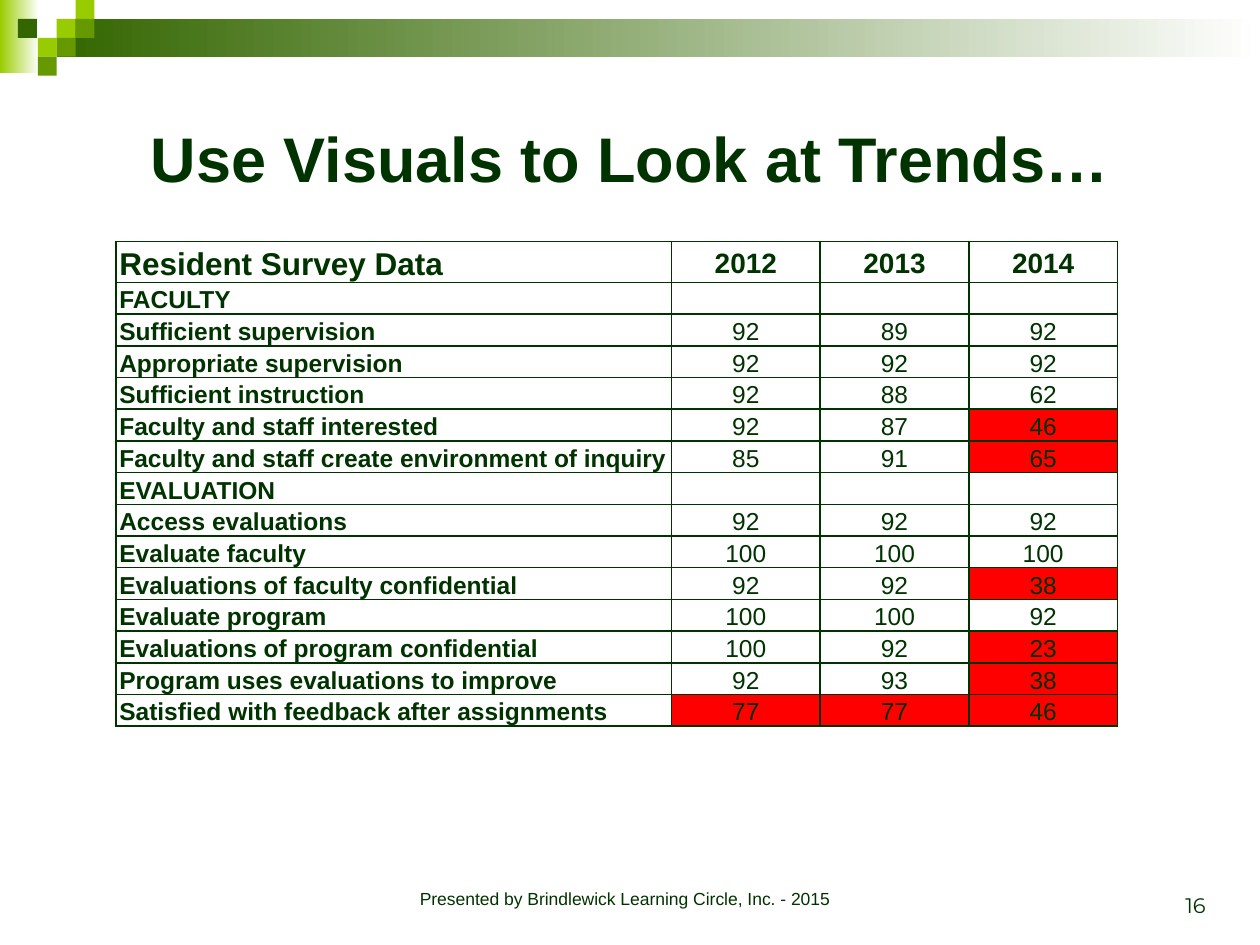
from dataclasses import dataclass

from lxml.etree import SubElement
from pptx import Presentation
from pptx.dml.color import RGBColor
from pptx.enum.shapes import MSO_SHAPE as Shape
from pptx.enum.text import MSO_ANCHOR as Anchor, MSO_AUTO_SIZE as AutoSize, PP_ALIGN as Align
from pptx.oxml.ns import qn
from pptx.util import Pt


@dataclass(frozen=True)
class Theme:
    """Colours, fonts and type sizes of the slide."""
    ink: str = "003300"
    paper: str = "FFFFFF"
    alert: str = "FF0000"
    lime: str = "99CC00"
    leaf: str = "669900"
    forest: str = "336600"
    font: str = "Arial"
    number_font: str = "Montserrat"
    title: int = 36
    table_title: int = 18
    year: int = 16
    body: int = 14
    page: int = 12
    footer: int = 10


THEME = Theme()
TILE = 10.8
TILES = [
    (3, 1, THEME.lime), (4, 0, THEME.lime), (4, 1, THEME.leaf), (2, 2, THEME.lime),
    (0.95, 1, THEME.forest), (3, 2, THEME.leaf), (2, 3, THEME.leaf),
]
COLUMN_WIDTHS = [317.5, 85, 85, 85]
HEADER_HEIGHT, ROW_HEIGHT = 23.4, 18.1
HEADER = ["Resident Survey Data", "2012", "2013", "2014"]
SURVEY = [
    ("FACULTY", ("", "", ""), ()),
    ("Sufficient supervision", (92, 89, 92), ()),
    ("Appropriate supervision", (92, 92, 92), ()),
    ("Sufficient instruction", (92, 88, 62), ()),
    ("Faculty and staff interested", (92, 87, 46), (3,)),
    ("Faculty and staff create environment of inquiry", (85, 91, 65), (3,)),
    ("EVALUATION", ("", "", ""), ()),
    ("Access evaluations", (92, 92, 92), ()),
    ("Evaluate faculty", (100, 100, 100), ()),
    ("Evaluations of faculty confidential", (92, 92, 38), (3,)),
    ("Evaluate program", (100, 100, 92), ()),
    ("Evaluations of program confidential", (100, 92, 23), (3,)),
    ("Program uses evaluations to improve", (92, 93, 38), (3,)),
    ("Satisfied with feedback after assignments", (77, 77, 46), (1, 2, 3)),
]


def write_text(frame, text, size, font=THEME.font, bold=False, align=Align.LEFT, spacing=None):
    """Write one formatted paragraph into a text frame."""
    paragraph = frame.paragraphs[0]
    paragraph.alignment = align
    if spacing:
        paragraph.line_spacing = spacing
    if not text:
        SubElement(paragraph._p, qn("a:endParaRPr"), sz=str(size * 100))
        return
    run = paragraph.add_run()
    run.text = text
    run.font.size = Pt(size)
    run.font.name = font
    run.font.bold = bold
    run.font.color.rgb = RGBColor.from_string(THEME.ink)


def add_borders(cell, color, width):
    """Draw a solid line on all four sides of a cell."""
    properties = cell._tc.get_or_add_tcPr()
    for side in ("lnL", "lnR", "lnT", "lnB"):
        line = SubElement(properties, qn(f"a:{side}"), w=str(Pt(width)))
        SubElement(SubElement(line, qn("a:solidFill")), qn("a:srgbClr"), val=color)


class SlideBuilder:
    """Holds the theme and the current slide."""

    def __init__(self, presentation, theme):
        """Add a title-only slide."""
        self.theme = theme
        self.slide = presentation.slides.add_slide(presentation.slide_layouts[5])

    def rectangle(self, left, top, width, height, color, fade=None):
        """Add a plain rectangle, or one that fades to a second colour."""
        shape = self.slide.shapes.add_shape(Shape.RECTANGLE, Pt(left), Pt(top), Pt(width), Pt(height))
        shape.shadow.inherit = False
        shape.line.fill.background()
        if fade:
            shape.fill.gradient()
            shape.fill.gradient_angle = 0
            for stop, position, shade in zip(shape.fill.gradient_stops, (0, 1), (color, fade)):
                stop.position = position
                stop.color.rgb = RGBColor.from_string(shade)
        else:
            shape.fill.solid()
            shape.fill.fore_color.rgb = RGBColor.from_string(color)

    def title(self, text, left, top, width, height):
        """Place and fill the title placeholder."""
        shape = self.slide.shapes.title
        shape.left, shape.top, shape.width, shape.height = map(Pt, (left, top, width, height))
        frame = shape.text_frame
        frame.auto_size = AutoSize.NONE
        frame.vertical_anchor = Anchor.MIDDLE
        write_text(frame, text, self.theme.title, bold=True, align=Align.CENTER)

    def text(self, text, left, top, width, height, anchor=Anchor.TOP, **style):
        """Add a wrapped text box."""
        frame = self.slide.shapes.add_textbox(Pt(left), Pt(top), Pt(width), Pt(height)).text_frame
        frame.word_wrap = True
        frame.vertical_anchor = anchor
        write_text(frame, text, **style)

    def cell(self, cell, text, fill, anchor, **style):
        """Format one table cell."""
        cell.margin_left = cell.margin_right = Pt(2)
        cell.margin_top = cell.margin_bottom = 0
        cell.vertical_anchor = anchor
        add_borders(cell, self.theme.ink, 1)
        cell.fill.solid()
        cell.fill.fore_color.rgb = RGBColor.from_string(fill)
        write_text(cell.text_frame, text, spacing=1.15, **style)

    def survey_table(self, left, top):
        """Add the survey results with flagged scores filled in the alert colour."""
        theme = self.theme
        heights = [HEADER_HEIGHT] + [ROW_HEIGHT] * len(SURVEY)
        table = self.slide.shapes.add_table(
            len(heights), len(COLUMN_WIDTHS), Pt(left), Pt(top),
            Pt(sum(COLUMN_WIDTHS)), Pt(sum(heights))).table
        table.first_row = table.horz_banding = False
        for column, width in zip(table.columns, COLUMN_WIDTHS):
            column.width = Pt(width)
        for row, height in zip(table.rows, heights):
            row.height = Pt(height)
        for column, text in enumerate(HEADER):
            self.cell(table.cell(0, column), text, theme.paper,
                      Anchor.MIDDLE if column else Anchor.BOTTOM,
                      size=theme.year if column else theme.table_title, bold=True,
                      align=Align.CENTER if column else Align.LEFT)
        for row, (label, scores, flagged) in enumerate(SURVEY, start=1):
            for column, value in enumerate((label, *scores)):
                self.cell(table.cell(row, column), str(value),
                          theme.alert if column in flagged else theme.paper,
                          Anchor.TOP if column == 3 else Anchor.BOTTOM,
                          size=theme.body, bold=column == 0,
                          align=Align.CENTER if column else Align.LEFT)


def main():
    """Build and save the slide."""
    presentation = Presentation()
    presentation.slide_width, presentation.slide_height = Pt(720), Pt(540)
    builder = SlideBuilder(presentation, THEME)
    builder.rectangle(0, 0, 22.3, 41.8, THEME.lime, fade=THEME.paper)
    builder.rectangle(3 * TILE, TILE, 720 - 3 * TILE, 2 * TILE, THEME.forest, fade=THEME.paper)
    for column, row, color in TILES:
        builder.rectangle(column * TILE, row * TILE, TILE, TILE, color)
    builder.title("Use Visuals to Look at Trends…", 36, 36, 648, 108)
    builder.survey_table(66.2, 138)
    builder.text("16", 528, 492, 168, 36, anchor=Anchor.BOTTOM,
                 size=THEME.page, font=THEME.number_font, align=Align.RIGHT)
    builder.text("Presented by Brindlewick Learning Circle, Inc. - 2015", 198, 504, 318, 24,
                 size=THEME.footer, align=Align.CENTER)
    presentation.save("out.pptx")


if __name__ == "__main__":
    main()
